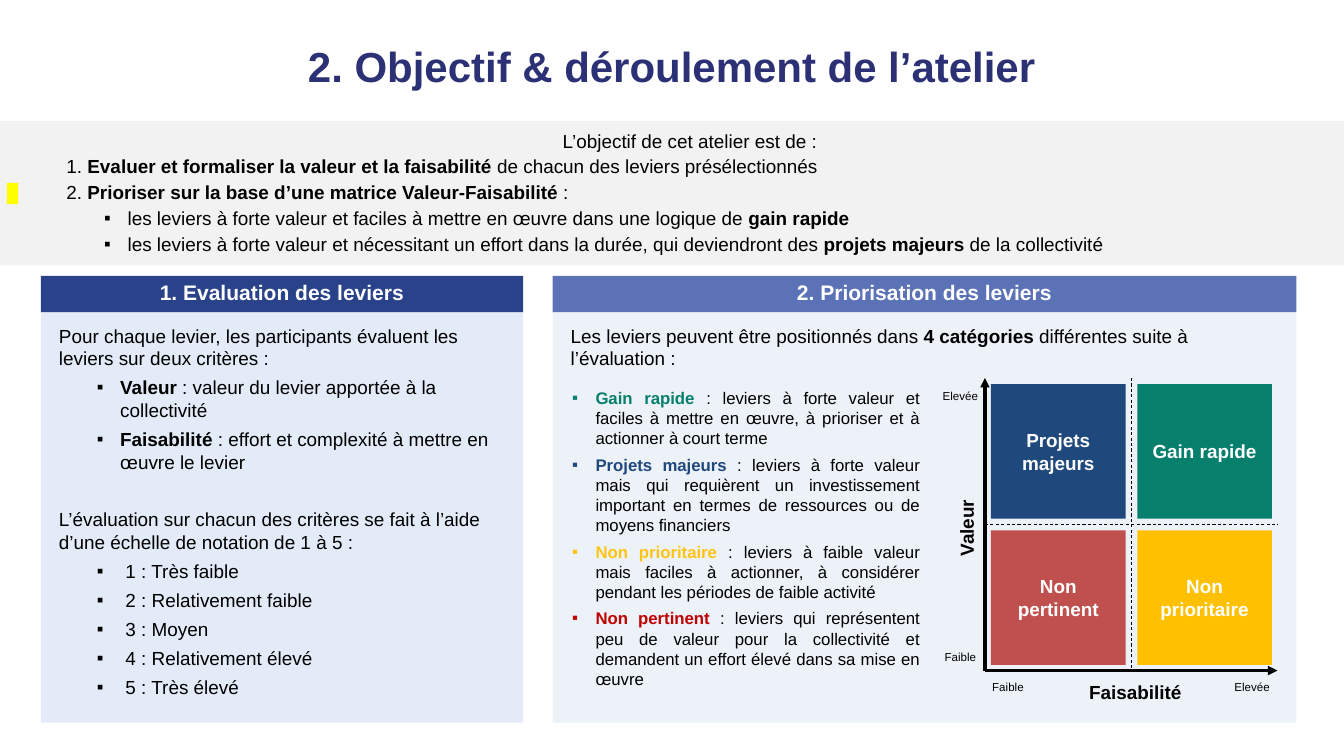
from lxml import etree
from pptx import Presentation
from pptx.dml.color import RGBColor
from pptx.enum import dml, shapes, text
from pptx.oxml import ns
from pptx.util import Inches, Pt

COLORS = {
    "title": "2C3176", "black": "000000", "white": "FFFFFF", "band": "F2F2F2",
    "mark": "FFFF00", "navy": "294289", "blue": "5C72B6", "sky": "C6D9F1",
    "pale": "DCE6F2", "major": "1F497D", "quick": "06806C", "low": "FFC412",
    "amber": "FFC000", "red": "C00000", "brick": "C0504D",
}
ALIGN = text.PP_ALIGN
INSET = (0.1, 0.05, 0.1, 0.05)
PANEL = (0.24, 0.16, 0.24, 0.05)


def rgb(name):
    """Return the named colour."""
    return RGBColor.from_string(COLORS[name])


def bullet(para, indent, hang, color):
    """Give a paragraph a hanging square bullet."""
    props = para._p.get_or_add_pPr()
    props.set("marL", str(Inches(indent)))
    props.set("indent", str(-Inches(hang)))
    tint = etree.SubElement(props, ns.qn("a:buClr"))
    etree.SubElement(tint, ns.qn("a:srgbClr")).set("val", COLORS[color])
    etree.SubElement(props, ns.qn("a:buFont")).set("typeface", "Arial")
    etree.SubElement(props, ns.qn("a:buChar")).set("char", "▪")


def write(shape, items, size=18, color="black", bold=None, align=ALIGN.LEFT,
          inset=INSET, anchor=text.MSO_ANCHOR.TOP, gap=0):
    """Fill a shape with paragraphs, where ** marks bold parts."""
    frame = shape.text_frame
    frame.word_wrap = True
    frame.vertical_anchor = anchor
    (frame.margin_left, frame.margin_top,
     frame.margin_right, frame.margin_bottom) = map(Inches, inset)
    for num, item in enumerate(items):
        item = item if isinstance(item, dict) else {"text": item}
        para = frame.paragraphs[0] if num == 0 else frame.add_paragraph()
        tint = item.get("tint")
        if "bullet" in item:
            bullet(para, *item["bullet"], tint or color)
        para.alignment = item.get("align", align)
        if num:
            para.space_before = Pt(item.get("gap", gap))
        para.font.name = "Arial"
        para.font.size = Pt(size)
        para.font.bold = bold
        if not tint:
            para.font.color.rgb = rgb(color)
        for pos, part in enumerate(item["text"].split("**")):
            if part:
                run = para.add_run()
                run.text = part
                if pos % 2:
                    run.font.bold = True
                if tint:
                    run.font.color.rgb = rgb(tint if pos % 2 else color)


def block(slide, box, fill, alpha=None):
    """Draw a plain filled rectangle."""
    shape = slide.shapes.add_shape(shapes.MSO_SHAPE.RECTANGLE, *map(Inches, box))
    shape.shadow.inherit = False
    shape.fill.solid()
    shape.fill.fore_color.rgb = rgb(fill)
    shape.line.fill.background()
    if alpha:
        tint = shape.fill._xPr.find(".//" + ns.qn("a:srgbClr"))
        etree.SubElement(tint, ns.qn("a:alpha")).set("val", str(alpha * 1000))
    return shape


def label(slide, box, items, **style):
    """Place a text box."""
    shape = slide.shapes.add_textbox(*map(Inches, box))
    write(shape, items, **style)
    return shape


def rule(slide, start, end, width, arrow=False):
    """Draw an arrow or a dashed line."""
    line = slide.shapes.add_connector(
        shapes.MSO_CONNECTOR.STRAIGHT, *map(Inches, start + end))
    line.line.color.rgb = rgb("black")
    line.line.width = Pt(width)
    if arrow:
        tail = etree.SubElement(line.line._get_or_add_ln(), ns.qn("a:tailEnd"))
        tail.set("type", "triangle")
    else:
        line.line.dash_style = dml.MSO_LINE.DASH
    etree.SubElement(line._element.spPr, ns.qn("a:effectLst"))


def intro(slide, box):
    """Draw the band that states the goals."""
    left, top, width, height = box
    block(slide, box, "band")
    block(slide, (left + 0.09, top + 0.82, 0.15, 0.28), "mark")
    sub = {"bullet": (0.81, 0.31)}
    label(slide, (left + 0.78, top + 0.06, width - 1.09, height - 0.13), [
        {"text": "L’objectif de cet atelier est de :", "align": ALIGN.CENTER},
        "1. **Evaluer et formaliser la valeur et la faisabilité **"
        "de chacun des leviers présélectionnés",
        "2. **Prioriser sur la base d’une matrice Valeur-Faisabilité** :",
        {"text": "les leviers à forte valeur et faciles à mettre en œuvre "
                 "dans une logique de **gain rapide**", **sub},
        {"text": "les leviers à forte valeur et nécessitant un effort dans la durée, "
                 "qui deviendront des **projets majeurs **de la collectivité", **sub},
    ], gap=3)


def panel(slide, box, head, fill, back, items):
    """Draw a headed panel with its body text."""
    left, top, width, height = box
    bar = 0.48
    body = block(slide, (left, top + bar, width, height - bar), back, 50)
    write(body, items, inset=PANEL, gap=6)
    write(block(slide, (left, top, width, bar), fill), [head],
          size=20, color="white", bold=True, align=ALIGN.CENTER)


def rating(slide, box):
    """Draw the panel on how levers are rated."""
    crit = [
        "**Valeur** : valeur du levier apportée à la collectivité",
        "**Faisabilité** : effort et complexité à mettre en œuvre le levier",
    ]
    scale = ["Très faible", "Relativement faible", "Moyen",
             "Relativement élevé", "Très élevé"]
    panel(slide, box, "1. Evaluation des leviers", "navy", "sky", [
        "Pour chaque levier, les participants évaluent les leviers sur deux critères :",
        *({"text": line, "bullet": (0.81, 0.31)} for line in crit),
        {"text": "L’évaluation sur chacun des critères se fait à l’aide "
                 "d’une échelle de notation de 1 à 5 :", "gap": 33},
        *({"text": f"{num} : {name}", "bullet": (0.88, 0.38)}
          for num, name in enumerate(scale, 1)),
    ])


def ranking(slide, box):
    """Draw the panel on the four lever groups."""
    left, top = box[:2]
    panel(slide, box, "2. Priorisation des leviers", "blue", "pale", [
        "Les leviers peuvent être positionnés dans **4 catégories **"
        "différentes suite à l’évaluation :"])
    groups = [
        ("quick", "**Gain rapide **: leviers à forte valeur et faciles à mettre "
                  "en œuvre, à prioriser et à actionner à court terme"),
        ("major", "**Projets majeurs** : leviers à forte valeur mais qui requièrent "
                  "un investissement important en termes de ressources ou de "
                  "moyens financiers"),
        ("low", "**Non prioritaire **: leviers à faible valeur mais faciles à "
                "actionner, à considérer pendant les périodes de faible activité"),
        ("red", "**Non pertinent **: leviers qui représentent peu de valeur pour la "
                "collectivité et demandent un effort élevé dans sa mise en œuvre"),
    ]
    label(slide, (left + 0.16, top + 1.43, 4.8, 3.58),
          [{"text": line, "tint": tint, "bullet": (0.31, 0.31)}
           for tint, line in groups], size=16, align=ALIGN.JUSTIFY, gap=6)
    matrix(slide, (left + 5.72, top + 1.35, 3.87, 3.87))


def matrix(slide, box):
    """Draw the value and feasibility matrix."""
    left, top, width, height = box
    right, base = left + width, top + height
    midx, midy = left + width / 2, top + height / 2
    rule(slide, (left, base), (right, base), 3, arrow=True)
    rule(slide, (left, base), (left, top), 3, arrow=True)
    rule(slide, (left, midy), (right, midy), 0.75)
    rule(slide, (midx, top), (midx, base), 0.75)
    cells = [("Projets majeurs", "major"), ("Gain rapide", "quick"),
             ("Non pertinent", "brick"), ("Non prioritaire", "amber")]
    for num, (name, fill) in enumerate(cells):
        row, col = divmod(num, 2)
        cell = block(slide, (left + 0.08 + col * width / 2,
                             top + 0.08 + row * height / 2, 1.78, 1.78), fill)
        write(cell, [name], color="white", bold=True, align=ALIGN.CENTER,
              anchor=text.MSO_ANCHOR.MIDDLE)
    axis = {"bold": True, "align": ALIGN.CENTER}
    label(slide, (midx - 0.73, base + 0.08, 1.57, 0.4), ["Faisabilité"], **axis)
    side = label(slide, (left - 1.03, midy - 0.15, 1.57, 0.4), ["Valeur"], **axis)
    side.rotation = 270
    ends = [("Elevée", right - 0.69, base + 0.08), ("Faible", left - 0.05, base + 0.08),
            ("Elevée", left - 0.68, top + 0.09), ("Faible", left - 0.68, base - 0.32)]
    for name, x, y in ends:
        label(slide, (x, y, 0.71, 0.29), [name], size=11, align=ALIGN.CENTER)


def main():
    """Build the slide and save it."""
    deck = Presentation()
    deck.slide_width, deck.slide_height = Inches(17.78), Inches(10)
    slide = deck.slides.add_slide(deck.slide_layouts[6])
    label(slide, (1.09, 0.52, 15.59, 0.69), ["2. Objectif & déroulement de l’atelier"],
          size=40, color="title", bold=True, align=ALIGN.CENTER, inset=(0, 0.02, 0, 0))
    intro(slide, (0, 1.6, 17.78, 1.91))
    rating(slide, (0.54, 3.65, 6.38, 5.91))
    ranking(slide, (7.31, 3.65, 9.84, 5.91))
    deck.save("out.pptx")


if __name__ == "__main__":
    main()
